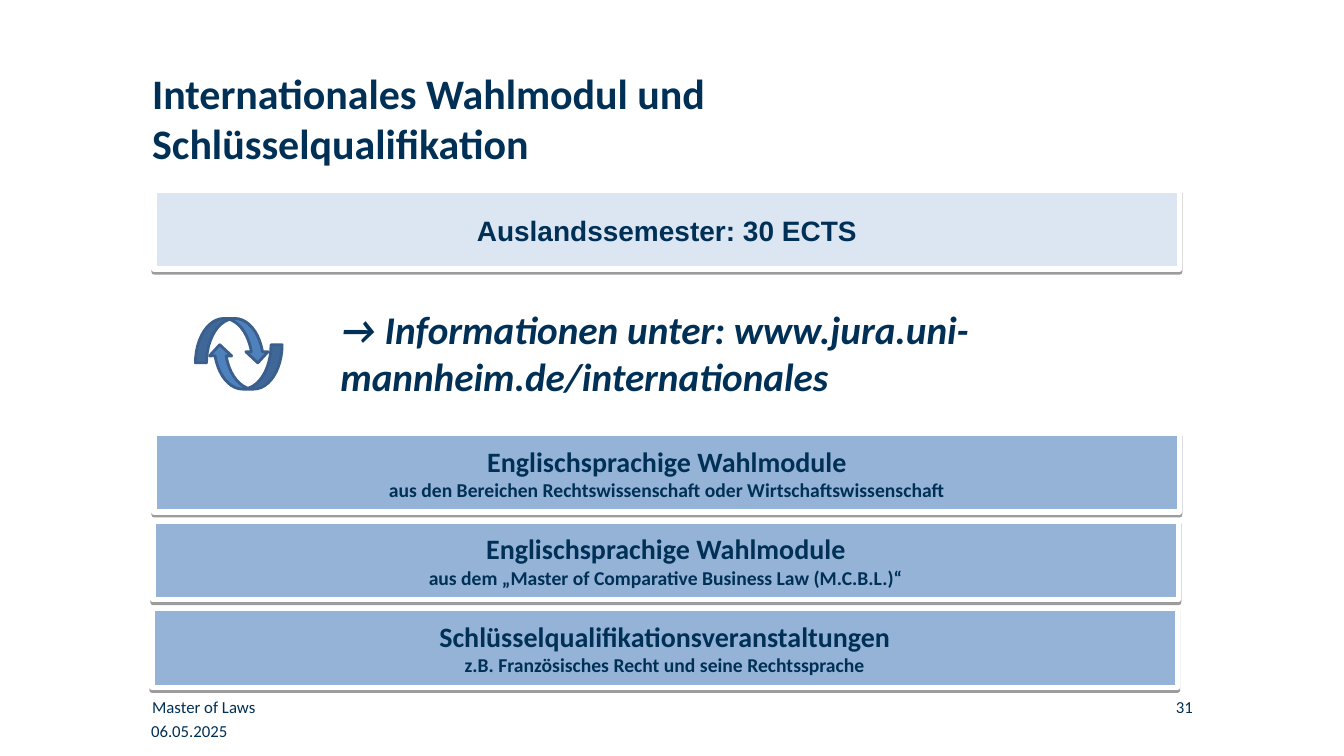
from dataclasses import dataclass

from lxml.etree import SubElement
from pptx import Presentation
from pptx.dml.color import RGBColor
from pptx.enum.shapes import MSO_SHAPE
from pptx.enum.text import MSO_ANCHOR, MSO_AUTO_SIZE, PP_ALIGN
from pptx.oxml.ns import qn
from pptx.shapes.autoshape import Shape
from pptx.slide import Slide
from pptx.text.text import TextFrame
from pptx.util import Inches, Pt

SLIDE_WIDTH = Inches(13.34)
SLIDE_HEIGHT = Inches(7.5)

NAVY = RGBColor(0x00, 0x30, 0x56)
PALE_BLUE = RGBColor(0xDC, 0xE6, 0xF2)
MID_BLUE = RGBColor(0x95, 0xB3, 0xD7)
ARROW_BLUE = RGBColor(0x4F, 0x81, 0xBD)
ARROW_OUTLINE = RGBColor(0x3A, 0x5F, 0x8C)
WHITE = RGBColor(0xFF, 0xFF, 0xFF)


@dataclass(frozen=True)
class Area:
    """Left, top, width and height in percent of the slide."""
    left: float
    top: float
    width: float
    height: float

    def box(self) -> tuple[int, int, int, int]:
        return (
            round(SLIDE_WIDTH * self.left / 100),
            round(SLIDE_HEIGHT * self.top / 100),
            round(SLIDE_WIDTH * self.width / 100),
            round(SLIDE_HEIGHT * self.height / 100),
        )


@dataclass(frozen=True)
class Line:
    text: str
    size: float
    font: str = "Calibri"
    bold: bool = True
    italic: bool = False


@dataclass(frozen=True)
class Banner:
    left: float
    top: float
    fill: RGBColor
    lines: tuple[Line, ...]


@dataclass(frozen=True)
class Label:
    area: Area
    line: Line
    alignment: PP_ALIGN = PP_ALIGN.LEFT
    inset: bool = False


@dataclass(frozen=True)
class CurvedArrow:
    left: float
    top: float
    rotation: float


BANNER_WIDTH, BANNER_HEIGHT = 76.31, 10.4
MODULE_LEFT, MODULE_LEFT_STEP = 11.47, -0.08
MODULE_TOP, MODULE_TOP_STEP = 57.33, 11.6
ARROW_WIDTH, ARROW_HEIGHT = 5.47, 5.87

TITLE_AREA = Area(11.32, 8.93, 63.49, 18.13)
TITLE = Line("Internationales Wahlmodul und Schlüsselqualifikation", 30)

MODULES = (
    ("Englischsprachige Wahlmodule",
     "aus den Bereichen Rechtswissenschaft oder Wirtschaftswissenschaft"),
    ("Englischsprachige Wahlmodule",
     "aus dem „Master of Comparative Business Law (M.C.B.L.)“"),
    ("Schlüsselqualifikationsveranstaltungen",
     "z.B. Französisches Recht und seine Rechtssprache"),
)
BANNERS = (
    Banner(11.47, 25.2, PALE_BLUE, (Line("Auslandssemester: 30 ECTS", 20, "Arial"),)),
    *(
        Banner(
            MODULE_LEFT + index * MODULE_LEFT_STEP,
            MODULE_TOP + index * MODULE_TOP_STEP,
            MID_BLUE,
            (Line(heading, 20), Line(detail, 14)),
        )
        for index, (heading, detail) in enumerate(MODULES)
    ),
)
LABELS = (
    Label(Area(24.59, 39.73, 57.27, 13.87),
          Line("→ Informationen unter: www.jura.uni-mannheim.de/internationales",
               28, italic=True), inset=True),
    Label(Area(11.32, 92.13, 23.31, 2.67), Line("Master of Laws", 12, bold=False)),
    Label(Area(77.21, 92.13, 11.54, 2.67), Line("31", 12, bold=False), PP_ALIGN.RIGHT),
    Label(Area(11.24, 95.33, 23.31, 2.67), Line("06.05.2025", 12, bold=False)),
)
ARROWS = (CurvedArrow(14.54, 42.13, 0), CurvedArrow(15.52, 45.6, 180))


def write_lines(frame: TextFrame, lines: tuple[Line, ...], alignment: PP_ALIGN) -> None:
    frame.word_wrap = True
    for index, line in enumerate(lines):
        paragraph = frame.add_paragraph() if index else frame.paragraphs[0]
        paragraph.alignment = alignment
        run = paragraph.add_run()
        run.text = line.text
        run.font.name = line.font
        run.font.size = Pt(line.size)
        run.font.bold = line.bold
        run.font.italic = line.italic
        run.font.color.rgb = NAVY


def remove_insets(frame: TextFrame) -> None:
    frame.margin_left = frame.margin_right = 0
    frame.margin_top = frame.margin_bottom = 0


def add_bottom_shadow(shape: Shape) -> None:
    effects = shape.element.spPr.find(qn("a:effectLst"))
    shadow = SubElement(effects, qn("a:outerShdw"), blurRad="0", dist=str(Pt(2)),
                        dir="5400000", rotWithShape="0")
    color = SubElement(shadow, qn("a:srgbClr"), val="000000")
    SubElement(color, qn("a:alpha"), val="38000")


def add_painted_shape(slide: Slide, kind: MSO_SHAPE, area: Area, fill: RGBColor,
                      outline: RGBColor, outline_width: float) -> Shape:
    shape = slide.shapes.add_shape(kind, *area.box())
    shape.shadow.inherit = False
    shape.fill.solid()
    shape.fill.fore_color.rgb = fill
    shape.line.color.rgb = outline
    shape.line.width = Pt(outline_width)
    return shape


def add_title(slide: Slide) -> None:
    title = slide.shapes.title
    title.left, title.top, title.width, title.height = TITLE_AREA.box()
    frame = title.text_frame
    frame.auto_size = MSO_AUTO_SIZE.NONE
    frame.vertical_anchor = MSO_ANCHOR.TOP
    remove_insets(frame)
    write_lines(frame, (TITLE,), PP_ALIGN.LEFT)


def add_banner(slide: Slide, banner: Banner) -> None:
    area = Area(banner.left, banner.top, BANNER_WIDTH, BANNER_HEIGHT)
    shape = add_painted_shape(slide, MSO_SHAPE.RECTANGLE, area, banner.fill, WHITE, 3.82)
    add_bottom_shadow(shape)
    shape.text_frame.vertical_anchor = MSO_ANCHOR.MIDDLE
    write_lines(shape.text_frame, banner.lines, PP_ALIGN.CENTER)


def add_label(slide: Slide, label: Label) -> None:
    frame = slide.shapes.add_textbox(*label.area.box()).text_frame
    if not label.inset:
        remove_insets(frame)
    write_lines(frame, (label.line,), label.alignment)


def add_curved_arrow(slide: Slide, arrow: CurvedArrow) -> None:
    area = Area(arrow.left, arrow.top, ARROW_WIDTH, ARROW_HEIGHT)
    shape = add_painted_shape(slide, MSO_SHAPE.CURVED_DOWN_ARROW, area,
                              ARROW_BLUE, ARROW_OUTLINE, 2)
    shape.rotation = arrow.rotation


def main() -> None:
    presentation = Presentation()
    presentation.slide_width = SLIDE_WIDTH
    presentation.slide_height = SLIDE_HEIGHT
    slide = presentation.slides.add_slide(presentation.slide_layouts.get_by_name("Title Only"))
    add_title(slide)
    for banner in BANNERS:
        add_banner(slide, banner)
    for label in LABELS:
        add_label(slide, label)
    for arrow in ARROWS:
        add_curved_arrow(slide, arrow)
    presentation.save("out.pptx")


if __name__ == "__main__":
    main()
